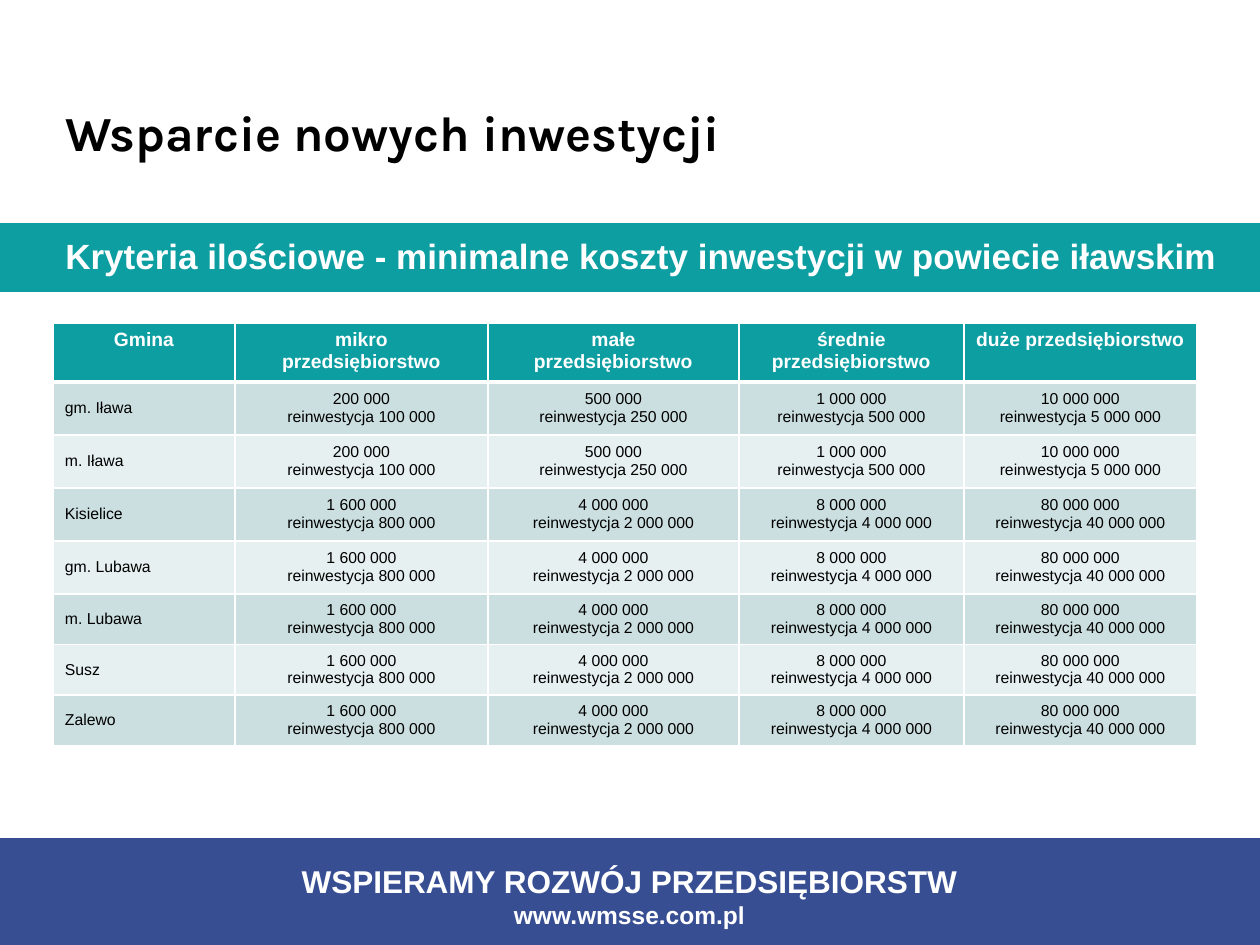
import pptx
import pptx.dml.color
import pptx.enum.shapes
import pptx.enum.text
import pptx.oxml
import pptx.oxml.ns
import pptx.util

PX_PER_INCH = 126
COLORS = {
    "teal": "0D9EA2",
    "blue": "374E93",
    "white": "FFFFFF",
    "black": "000000",
    "row_dark": "CCDFE0",
    "row_light": "E7F0F0",
}
CENTER = pptx.enum.text.PP_ALIGN.CENTER
LEFT = pptx.enum.text.PP_ALIGN.LEFT
MIDDLE = pptx.enum.text.MSO_ANCHOR.MIDDLE
TOP = pptx.enum.text.MSO_ANCHOR.TOP


def px(length):
    return pptx.util.Emu(round(length * 914400 / PX_PER_INCH))


def rgb(name):
    return pptx.dml.color.RGBColor.from_string(COLORS[name])


class SlideBuilder:
    """Holds the text style and the current slide."""

    def __init__(self, slide, font="Arial"):
        self.slide = slide
        self.font = font

    def set_lines(self, frame, lines, sizes, color, bold=True, align=LEFT, font=None):
        frame.text = "\n".join(lines)
        for paragraph, size in zip(frame.paragraphs, sizes):
            paragraph.alignment = align
            paragraph.font.name = font or self.font
            paragraph.font.size = pptx.util.Pt(size)
            paragraph.font.bold = bold
            paragraph.font.color.rgb = rgb(color)

    def band(self, top, height, color):
        band = self.slide.shapes.add_shape(
            pptx.enum.shapes.MSO_SHAPE.RECTANGLE, 0, px(top), px(1260), px(height))
        band.shadow.inherit = False
        band.fill.solid()
        band.fill.fore_color.rgb = rgb(color)
        band.line.color.rgb = rgb(color)
        band.line.width = pptx.util.Pt(1)

    def title(self, box, text):
        title = self.slide.shapes.title
        title.left, title.top, title.width, title.height = map(px, box)
        frame = title.text_frame
        frame.vertical_anchor = MIDDLE
        self.set_lines(frame, [text], [28], "black", font="Karla")
        frame.paragraphs[0].line_spacing = 0.9

    def text(self, box, lines, sizes, align=LEFT, wrap=True):
        frame = self.slide.shapes.add_textbox(*map(px, box)).text_frame
        frame.word_wrap = wrap
        self.set_lines(frame, lines, sizes, "white", align=align)

    def borders(self, cell, top, bottom):
        properties = cell._tc.get_or_add_tcPr()
        for side, points in (("L", 1), ("R", 1), ("T", top), ("B", bottom)):
            properties.append(pptx.oxml.parse_xml(
                f'<a:ln{side} {pptx.oxml.ns.nsdecls("a")} w="{points * 12700}">'
                f'<a:solidFill><a:srgbClr val="{COLORS["white"]}"/></a:solidFill>'
                f'</a:ln{side}>'))

    def table(self, left, top, widths, heights, rows):
        table = self.slide.shapes.add_table(
            len(rows), len(widths), px(left), px(top),
            px(sum(widths)), px(sum(heights))).table
        for column, width in zip(table.columns, widths):
            column.width = px(width)
        for r, (row, height) in enumerate(zip(rows, heights)):
            table.rows[r].height = px(height)
            header = r == 0
            fill = "teal" if header else "row_dark" if r % 2 else "row_light"
            for c, lines in enumerate(row):
                cell = table.cell(r, c)
                self.borders(cell, top=3 if r == 1 else 1, bottom=3 if header else 1)
                cell.fill.solid()
                cell.fill.fore_color.rgb = rgb(fill)
                cell.margin_left = cell.margin_right = px(12)
                cell.vertical_anchor = TOP if header else MIDDLE
                self.set_lines(cell.text_frame, lines,
                               [11 if header else 9] * len(lines),
                               "white" if header else "black", bold=header,
                               align=CENTER if header or c else LEFT)


def main():
    deck = pptx.Presentation()
    deck.slide_width, deck.slide_height = px(1260), px(945)
    builder = SlideBuilder(deck.slides.add_slide(deck.slide_layouts[5]))

    # Bands and footer
    builder.band(224, 67, "teal")
    builder.band(839, 106, "blue")
    builder.text((106, 856, 1047, 81),
                 ["WSPIERAMY ROZWÓJ PRZEDSIĘBIORSTW", "www.wmsse.com.pl"],
                 [18, 14], align=CENTER)

    # Headings
    builder.text((53, 228, 1183, 55),
                 ["Kryteria ilościowe - minimalne koszty inwestycji w powiecie iławskim"],
                 [20], wrap=False)
    builder.title((53, 54, 724, 164), "Wsparcie nowych inwestycji")

    # Minimum costs: (new investment, reinvestment) for each company size
    lower = [("200 000", "100 000"), ("500 000", "250 000"),
             ("1 000 000", "500 000"), ("10 000 000", "5 000 000")]
    higher = [("1 600 000", "800 000"), ("4 000 000", "2 000 000"),
              ("8 000 000", "4 000 000"), ("80 000 000", "40 000 000")]
    costs_by_commune = {
        "gm. Iława": lower, "m. Iława": lower,
        "Kisielice": higher, "gm. Lubawa": higher, "m. Lubawa": higher,
        "Susz": higher, "Zalewo": higher,
    }
    rows = [[["Gmina"], ["mikro", "przedsiębiorstwo"], ["małe", "przedsiębiorstwo"],
             ["średnie przedsiębiorstwo"], ["duże przedsiębiorstwo"]]]
    for commune, costs in costs_by_commune.items():
        rows.append([[commune]] + [[new, f"reinwestycja {again}"] for new, again in costs])
    builder.table(53, 323, [182, 253, 251, 225, 233], [58] + [53] * 4 + [49] * 3, rows)

    deck.save("out.pptx")


if __name__ == "__main__":
    main()
